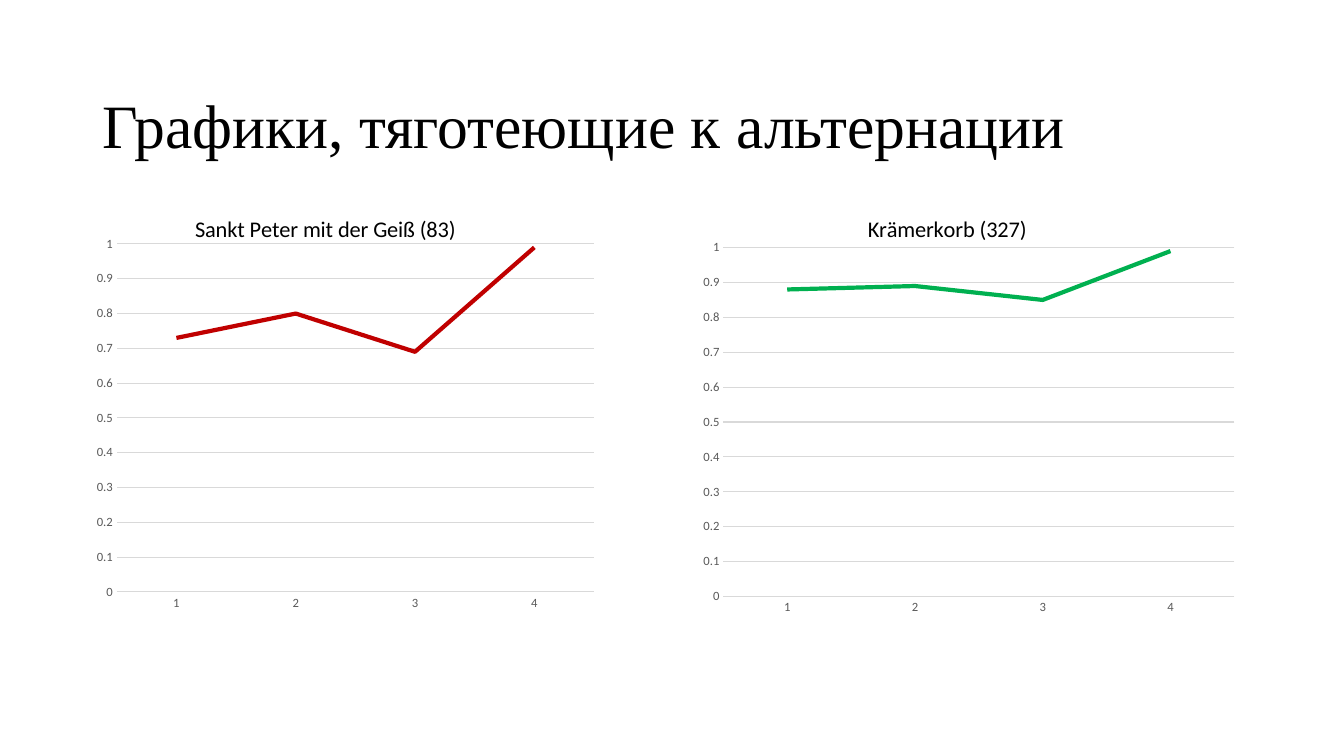
from lxml import etree
from pptx import Presentation
from pptx.chart.data import CategoryChartData
from pptx.dml.color import RGBColor
from pptx.enum.chart import XL_CHART_TYPE, XL_TICK_MARK
from pptx.enum.text import MSO_ANCHOR, MSO_AUTO_SIZE, PP_ALIGN
from pptx.oxml.ns import qn
from pptx.util import Pt

LINE = XL_CHART_TYPE.LINE
NO_TICK = XL_TICK_MARK.NONE
MIDDLE = MSO_ANCHOR.MIDDLE
NO_FIT = MSO_AUTO_SIZE.NONE
LEFT = PP_ALIGN.LEFT
EMU_PER_PX = 9144
CATEGORIES = ["1", "2", "3", "4"]

CHARTS = [
    {"box": (79, 200, 526, 421), "title": "Sankt Peter mit der Geiß (83)",
     "values": [0.73, 0.8, 0.69, 0.99], "color": "C00000",
     "title_at": {"x": 0.21, "y": 0.02},
     "plot_at": {"x": 0.07, "y": 0.1, "w": 0.9, "h": 0.82}},
    {"box": (684, 204, 557, 417), "title": "Krämerkorb (327)",
     "values": [0.88, 0.89, 0.85, 0.99], "color": "00B050",
     "title_at": {"x": 0.31, "y": 0.01},
     "plot_at": {"x": 0.06, "y": 0.1, "w": 0.91, "h": 0.83}},
]


def px(n):
    return n * EMU_PER_PX


def rgb(color):
    return RGBColor.from_string(color)


def set_font(font, name, size, color):
    font.name = name
    font.size = Pt(size)
    font.bold = False
    font.color.rgb = rgb(color)


def set_line(line, color, width):
    line.color.rgb = rgb(color)
    line.width = Pt(width)


def set_layout(parent, index, fractions, inner=False):
    for old in parent.findall(qn("c:layout")):
        parent.remove(old)
    layout = etree.Element(qn("c:layout"))
    manual = etree.SubElement(layout, qn("c:manualLayout"))
    if inner:
        etree.SubElement(manual, qn("c:layoutTarget")).set("val", "inner")
    for key in "xy":
        etree.SubElement(manual, qn(f"c:{key}Mode")).set("val", "edge")
    for key, value in fractions.items():
        etree.SubElement(manual, qn(f"c:{key}")).set("val", str(value))
    parent.insert(index, layout)


def add_title(s, box, text):
    sp = s.shapes.title
    sp.left, sp.top, sp.width, sp.height = map(px, box)
    tf = sp.text_frame
    tf.text = text
    tf.auto_size = NO_FIT
    tf.word_wrap = True
    tf.vertical_anchor = MIDDLE
    p = tf.paragraphs[0]
    p.alignment = LEFT
    p.line_spacing = 0.9
    set_font(p.font, "Times New Roman", 44, "000000")


def add_line_chart(s, box, title, values, color, title_at, plot_at):
    data = CategoryChartData()
    data.categories = CATEGORIES
    data.add_series("Series 1", values)
    chart = s.shapes.add_chart(LINE, *map(px, box), data).chart
    set_font(chart.font, "Calibri", 10, "000000")
    chart.has_legend = False

    chart.has_title = True
    tf = chart.chart_title.text_frame
    tf.text = title
    set_font(tf.paragraphs[0].font, "Calibri", 16, "000000")
    chart.chart_title.include_in_layout = False
    title_xml = chart.chart_title._element
    set_layout(title_xml, 1, title_at)
    set_layout(title_xml.getparent().find(qn("c:plotArea")), 0, plot_at, inner=True)

    for axis in (chart.category_axis, chart.value_axis):
        axis.major_tick_mark = NO_TICK
        axis.minor_tick_mark = NO_TICK
        set_font(axis.tick_labels.font, "Calibri", 9, "595959")
    set_line(chart.category_axis.format.line, "D9D9D9", 0.75)
    value_axis = chart.value_axis
    value_axis.minimum_scale = 0
    value_axis.maximum_scale = 1
    value_axis.major_unit = 0.1
    value_axis.format.line.fill.background()
    value_axis.has_major_gridlines = True
    set_line(value_axis.major_gridlines.format.line, "D9D9D9", 0.75)

    chart.plots[0].vary_by_categories = False
    series = chart.plots[0].series[0]
    series.smooth = False
    set_line(series.format.line, color, 3)


def main():
    prs = Presentation()
    prs.slide_width, prs.slide_height = px(1333), px(750)
    s = prs.slides.add_slide(prs.slide_layouts[5])
    add_title(s, (92, 55, 1216, 145), "Графики, тяготеющие к альтернации")
    for chart in CHARTS:
        add_line_chart(s, **chart)
    prs.save("out.pptx")


if __name__ == "__main__":
    main()
